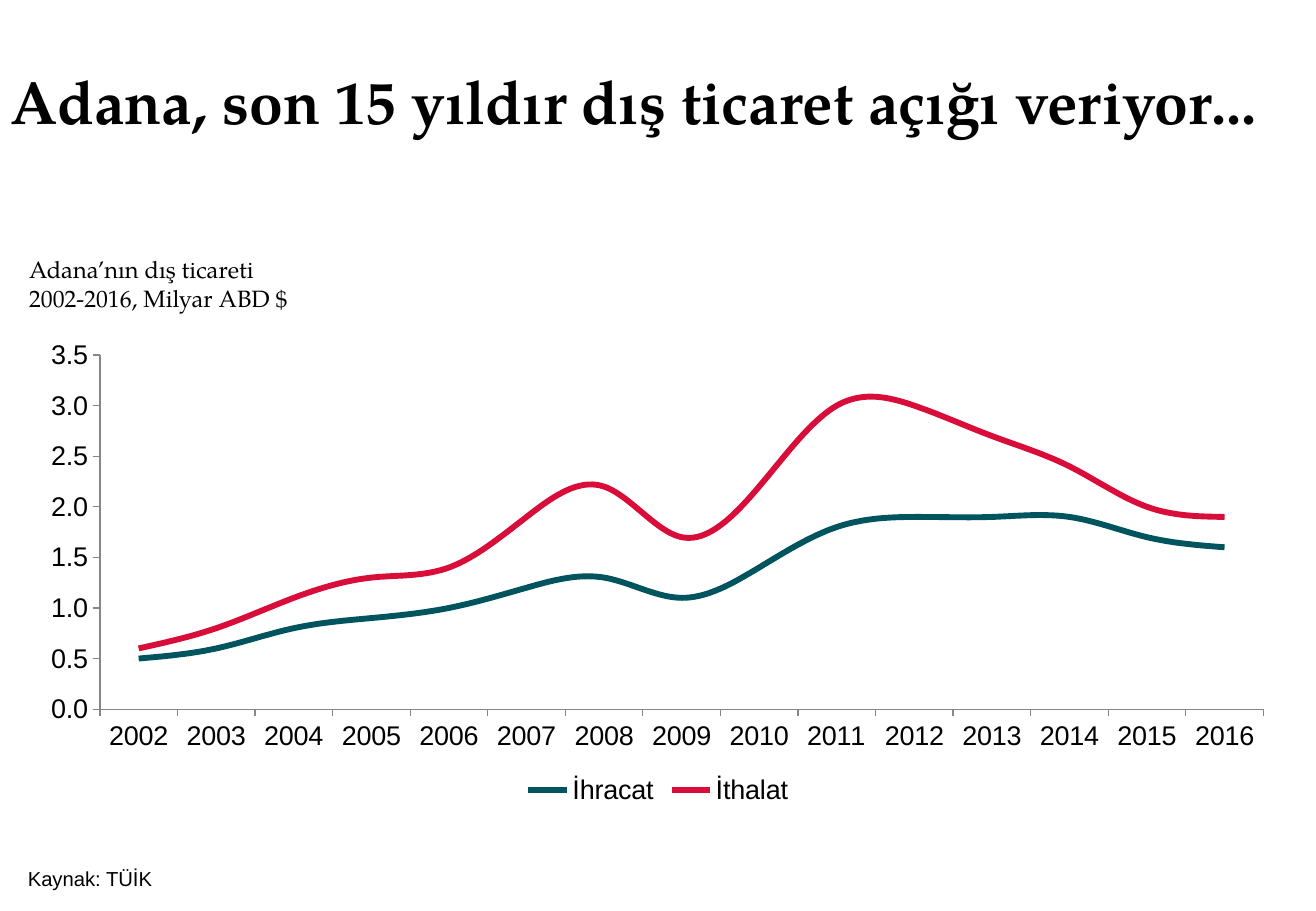
from dataclasses import dataclass

from lxml.etree import SubElement
from pptx import Presentation
from pptx.chart.chart import Chart
from pptx.chart.data import CategoryChartData
from pptx.dml.color import RGBColor
from pptx.enum.chart import XL_CHART_TYPE, XL_LEGEND_POSITION, XL_TICK_MARK
from pptx.enum.text import MSO_ANCHOR, PP_ALIGN
from pptx.oxml.ns import qn
from pptx.shapes.base import BaseShape
from pptx.util import Pt

SERIF = "TeX Gyre Pagella"
SANS = "Arial"
BLACK = "000000"
AXIS_GREY = "868686"


@dataclass
class TextBlock:
    lines: list[str]
    left: float
    top: float
    width: float
    height: float
    font: str
    size: float
    bold: bool = False
    anchor: MSO_ANCHOR = MSO_ANCHOR.TOP


@dataclass
class TradeFlow:
    name: str
    billions: list[float]
    color: str


def rgb(value: str) -> RGBColor:
    return RGBColor.from_string(value)


def write_text(shape: BaseShape, block: TextBlock) -> None:
    shape.left, shape.top = Pt(block.left), Pt(block.top)
    shape.width, shape.height = Pt(block.width), Pt(block.height)
    frame = shape.text_frame
    frame.margin_left = frame.margin_right = 0
    frame.margin_top = frame.margin_bottom = 0
    frame.word_wrap = True
    frame.vertical_anchor = block.anchor
    frame.text = "\n".join(block.lines)
    for paragraph in frame.paragraphs:
        paragraph.alignment = PP_ALIGN.LEFT
        paragraph.space_before = Pt(0)
        paragraph.line_spacing = 1.0
        for run in paragraph.runs:
            run.font.name = block.font
            run.font.size = Pt(block.size)
            run.font.bold = block.bold
            run.font.color.rgb = rgb(BLACK)


def place_plot(chart: Chart, x: float, y: float, w: float, h: float) -> None:
    """Fix the inner plot area as fractions of the chart."""
    plot_area = chart._chartSpace.chart.plotArea
    layout = plot_area.find(qn("c:layout"))
    if layout is None:
        layout = SubElement(plot_area, qn("c:layout"))
        plot_area.insert(0, layout)
    manual = SubElement(layout, qn("c:manualLayout"))
    settings = {"layoutTarget": "inner", "xMode": "edge", "yMode": "edge",
                "x": x, "y": y, "w": w, "h": h}
    for tag, value in settings.items():
        SubElement(manual, qn(f"c:{tag}")).set("val", str(value))


presentation = Presentation()
presentation.slide_width, presentation.slide_height = Pt(780), Pt(540)
slide = presentation.slides.add_slide(presentation.slide_layouts[5])

# Title, chart caption and source
headline = TextBlock(["Adana, son 15 yıldır dış ticaret açığı veriyor..."],
                     6.5, 37.5, 773.5, 102, SERIF, 36, bold=True)
caption = TextBlock(["Adana’nın dış ticareti", "2002-2016, Milyar ABD $"],
                    17.3, 151.2, 347, 34, SERIF, 14)
source = TextBlock(["Kaynak: TÜİK"], 16.5, 511.2, 592, 19.5, SANS, 12,
                   anchor=MSO_ANCHOR.MIDDLE)
write_text(slide.shapes.title, headline)
for block in (caption, source):
    write_text(slide.shapes.add_textbox(0, 0, 0, 0), block)

# Trade figures
flows = [
    TradeFlow("İhracat", [0.5, 0.6, 0.8, 0.9, 1.0, 1.2, 1.3, 1.1, 1.4, 1.8,
                          1.9, 1.9, 1.9, 1.7, 1.6], "00545E"),
    TradeFlow("İthalat", [0.6, 0.8, 1.1, 1.3, 1.4, 1.9, 2.2, 1.7, 2.2, 3.0,
                          3.0, 2.7, 2.4, 2.0, 1.9], "D90D39"),
]
trade = CategoryChartData(number_format="0.0")
trade.categories = [str(year) for year in range(2002, 2017)]
for flow in flows:
    trade.add_series(flow.name, flow.billions)

# Line chart
chart = slide.shapes.add_chart(XL_CHART_TYPE.LINE, Pt(15.8), Pt(196.6),
                               Pt(748.8), Pt(283.7), trade).chart
chart.has_title = False
chart.font.name = SANS
chart.font.size = Pt(16)
chart.font.color.rgb = rgb(BLACK)
chart.has_legend = True
chart.legend.position = XL_LEGEND_POSITION.BOTTOM
chart.legend.include_in_layout = False
chart.plots[0].vary_by_categories = False
place_plot(chart, 0.058, 0.049, 0.921, 0.74)

for series, flow in zip(chart.plots[0].series, flows):
    series.smooth = True
    series.format.line.width = Pt(3.5)
    series.format.line.color.rgb = rgb(flow.color)

# Axes
for axis in (chart.category_axis, chart.value_axis):
    axis.has_major_gridlines = False
    axis.major_tick_mark = XL_TICK_MARK.OUTSIDE
    axis.minor_tick_mark = XL_TICK_MARK.NONE
    axis.format.line.width = Pt(0.75)
    axis.format.line.color.rgb = rgb(AXIS_GREY)
chart.value_axis.minimum_scale = 0
chart.value_axis.maximum_scale = 3.5
chart.value_axis.major_unit = 0.5
chart.value_axis.tick_labels.number_format = "#,##0.0"
chart.value_axis.tick_labels.number_format_is_linked = False

presentation.save("out.pptx")
